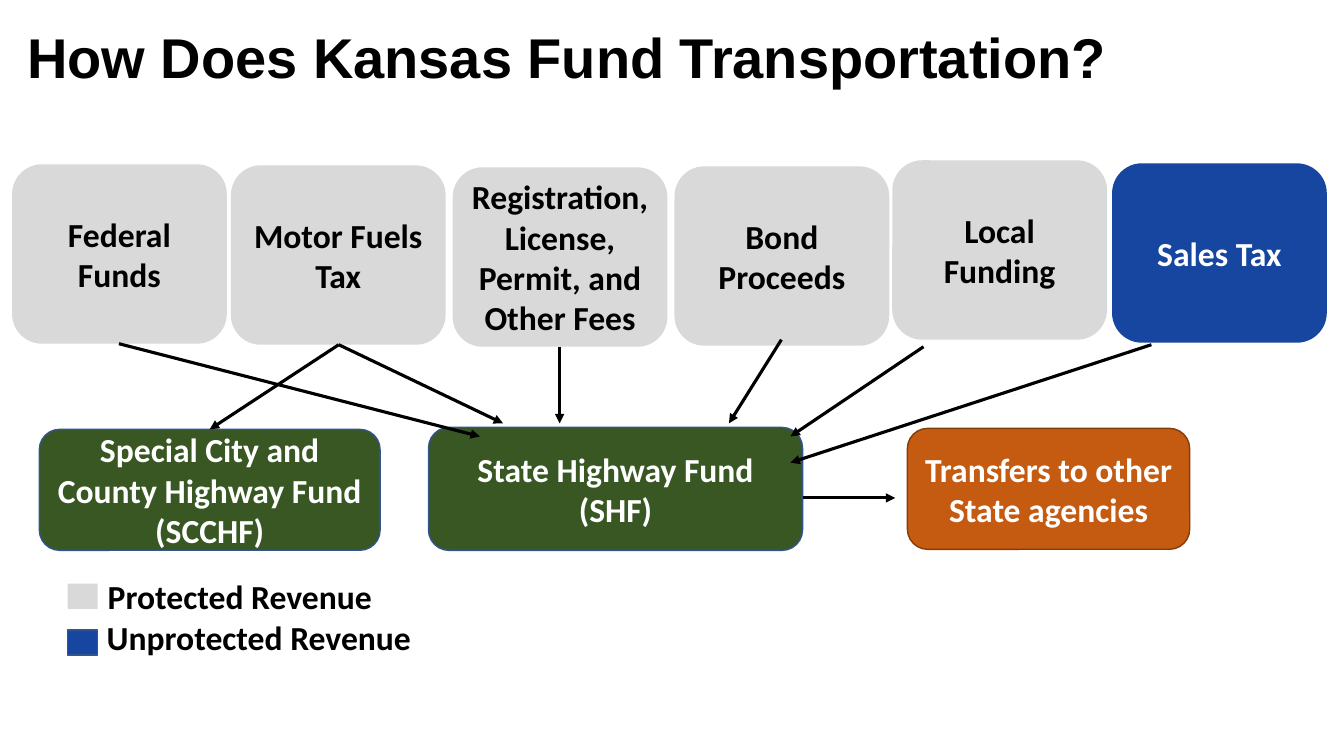
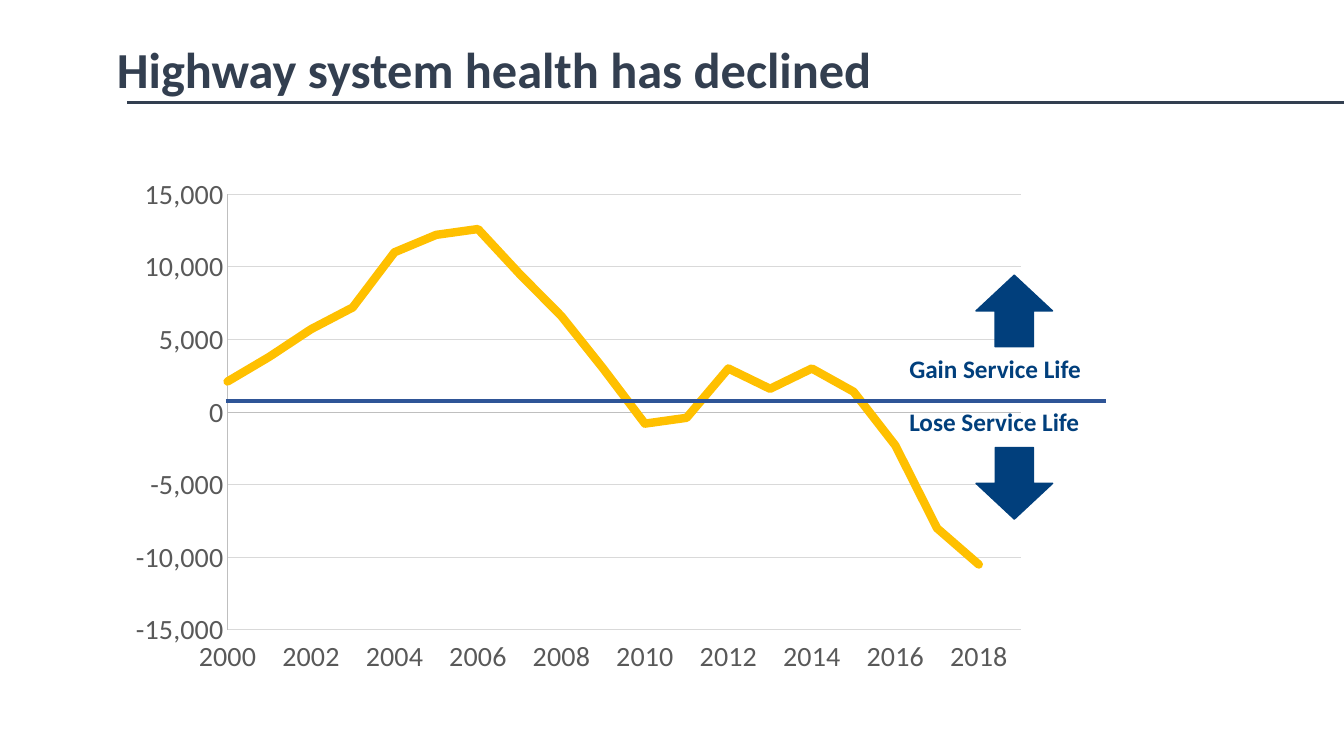
from dataclasses import dataclass

from lxml import etree
from pptx import Presentation
from pptx import util as u
from pptx.chart import data as chart_data
from pptx.dml.color import RGBColor
from pptx.enum import chart as chart_enum, shapes, text
from pptx.oxml import parse_xml
from pptx.oxml.ns import nsdecls, qn


@dataclass(frozen=True)
class Theme:
    black: str = "000000"
    white: str = "FFFFFF"
    slate: str = "333F50"
    protected: str = "D9D9D9"
    unprotected: str = "16469F"
    fund: str = "385723"
    transfer: str = "C55A11"
    transfer_edge: str = "843C0B"
    edge: str = "325491"
    navy: str = "013F7C"
    zero_line: str = "2F5597"
    health: str = "FFC000"
    axis_text: str = "595959"
    axis_line: str = "BFBFBF"
    grid: str = "D9D9D9"
    body_font: str = "Calibri"
    title_font: str = "Arial"
    flow_title: int = 40
    health_title: int = 36
    label: int = 24
    axis: int = 20
    note: int = 18


theme = Theme()
rgb = RGBColor.from_string


def write(frame, paragraphs, size, color, font=theme.body_font,
          align=text.PP_ALIGN.LEFT, anchor=text.MSO_ANCHOR.TOP, spacing=None):
    """Fill a text frame with bold paragraphs in one style."""
    frame.word_wrap = True
    frame.auto_size = text.MSO_AUTO_SIZE.NONE
    frame.vertical_anchor = anchor
    for index, words in enumerate(paragraphs):
        paragraph = frame.add_paragraph() if index else frame.paragraphs[0]
        paragraph.alignment = align
        paragraph.line_spacing = spacing
        run = paragraph.add_run()
        run.text = words
        for key, value in dict(name=font, size=u.Pt(size), bold=True).items():
            setattr(run.font, key, value)
        run.font.color.rgb = rgb(color)


def draw_line(slide, start, end, color, width, arrow=False):
    """Draw a straight line, with an arrowhead at its end if asked."""
    line = slide.shapes.add_connector(
        shapes.MSO_CONNECTOR.STRAIGHT, *map(u.Inches, start + end))
    line.line.color.rgb = rgb(color)
    line.line.width = u.Pt(width)
    if arrow:
        etree.SubElement(line.line._get_or_add_ln(), qn("a:tailEnd"), type="triangle")
    etree.SubElement(line._element.spPr, qn("a:effectLst"))


prs = Presentation()
prs.slide_width, prs.slide_height = u.Inches(13.33), u.Inches(7.5)

# Slides and their titles
titles = [
    ("How Does Kansas Fund Transportation?", (0.17, 0.25, 11.5, 1.45),
     theme.flow_title, theme.black, theme.title_font),
    ("Highway system health has declined", (1.06, 0.4, 11.92, 0.69),
     theme.health_title, theme.slate, theme.body_font),
]
for words, place, size, color, font in titles:
    title = prs.slides.add_slide(prs.slide_layouts[5]).shapes.title
    title.left, title.top, title.width, title.height = map(u.Inches, place)
    write(title.text_frame, [words], size, color, font, spacing=0.9)
funding, health = prs.slides

# Funding: revenue sources above, funds and transfers below
source_size = (2.13, 1.78)
gray = (theme.protected, None, theme.black)
blue = (theme.unprotected, None, theme.white)
green = (theme.fund, theme.edge, theme.white)
orange = (theme.transfer, theme.transfer_edge, theme.white)
boxes = [
    (["State Highway Fund (SHF)"], (4.25, 4.24, 3.71, 1.22), green),
    (["Special City and County Highway Fund", "(SCCHF)"], (0.39, 4.26, 3.38, 1.2), green),
    (["Transfers to other State agencies"], (9, 4.25, 2.8, 1.2), orange),
    (["Federal Funds"], (0.12, 1.63) + source_size, gray),
    (["Motor Fuels Tax"], (2.29, 1.64) + source_size, gray),
    (["Registration, License, Permit, and Other Fees"], (4.49, 1.66) + source_size, gray),
    (["Bond Proceeds"], (6.69, 1.65) + source_size, gray),
    (["Local Funding"], (8.85, 1.59) + source_size, gray),
    (["Sales Tax"], (11.03, 1.62) + source_size, blue),
    # Legend swatches
    ([], (0.67, 5.79, 0.3, 0.25), gray),
    ([], (0.67, 6.25, 0.3, 0.25), (theme.unprotected, theme.edge, theme.white)),
]
for words, place, (fill, edge, color) in boxes:
    outline = shapes.MSO_SHAPE.ROUNDED_RECTANGLE if words else shapes.MSO_SHAPE.RECTANGLE
    box = funding.shapes.add_shape(outline, *map(u.Inches, place))
    box.shadow.inherit = False
    box.fill.solid()
    box.fill.fore_color.rgb = rgb(fill)
    if edge:
        box.line.color.rgb = rgb(edge)
        box.line.width = u.Pt(1)
    else:
        box.line.fill.background()
    write(box.text_frame, words, theme.label, color,
          align=text.PP_ALIGN.CENTER, anchor=text.MSO_ANCHOR.MIDDLE)

# Flows between sources, funds and agencies
flows = [
    ((1.18, 3.41), (4.76, 4.33)),
    ((3.36, 3.42), (4.99, 4.2)),
    ((3.36, 3.42), (2.08, 4.26)),
    ((5.55, 3.44), (5.55, 4.2)),
    ((7.75, 3.37), (7.23, 4.2)),
    ((9.16, 3.44), (7.84, 4.33)),
    ((11.42, 3.42), (7.84, 4.59)),
    ((7.96, 4.94), (8.88, 4.94)),
]
for start, end in flows:
    draw_line(funding, start, end, theme.black, 2.25, arrow=True)

# Health: title rule and chart
draw_line(health, (1.26, 1.02), (13.33, 1.02), theme.slate, 2.25)

scores = [2100, 3800, 5700, 7200, 11000, 12200, 12600, 9500, 6600, 3000,
          -800, -400, 3000, 1600, 3000, 1400, -2300, -8000, -10500]
history = chart_data.XyChartData()
series = history.add_series("Series 1")
for year, score in enumerate(scores, 2000):
    series.add_data_point(year, score)
chart = health.shapes.add_chart(
    chart_enum.XL_CHART_TYPE.XY_SCATTER_LINES_NO_MARKERS,
    *map(u.Inches, (1.06, 1.64, 9.5, 5.05)), history).chart
chart.has_legend = chart.has_title = False
chart.font.name = theme.body_font
chart.font.size = u.Pt(theme.axis)
chart.font.color.rgb = rgb(theme.axis_text)

plot = chart.plots[0]
plot.vary_by_categories = False
trend = plot.series[0]
trend.smooth = False
trend.marker.style = chart_enum.XL_MARKER_STYLE.NONE
trend.format.line.color.rgb = rgb(theme.health)
trend.format.line.width = u.Pt(6)
trend.format.line._get_or_add_ln().set("cap", "rnd")

low, beside = chart_enum.XL_TICK_LABEL_POSITION.LOW, chart_enum.XL_TICK_LABEL_POSITION.NEXT_TO_AXIS
axes = [
    (chart.category_axis, "General", low, dict(
        minimum_scale=2000, maximum_scale=2019, major_unit=2, has_major_gridlines=False)),
    (chart.value_axis, "#,##0", beside, dict(
        minimum_scale=-15000, maximum_scale=15000, major_unit=5000, has_major_gridlines=True)),
]
for axis, number_format, position, settings in axes:
    settings.update(major_tick_mark=chart_enum.XL_TICK_MARK.NONE,
                    minor_tick_mark=chart_enum.XL_TICK_MARK.NONE)
    for key, value in settings.items():
        setattr(axis, key, value)
    axis.tick_label_position = position
    axis.tick_labels.number_format = number_format
    axis.tick_labels.number_format_is_linked = False
    axis.format.line.color.rgb = rgb(theme.axis_line)
    axis.format.line.width = u.Pt(0.75)
grid = chart.value_axis.major_gridlines.format.line
grid.color.rgb = rgb(theme.grid)
grid.width = u.Pt(0.75)

# Fixed inner plot area
plot_area = chart._chartSpace.chart.plotArea
for old_layout in plot_area.findall(qn("c:layout")):
    plot_area.remove(old_layout)
settings = dict(layoutTarget="inner", xMode="edge", yMode="edge", x=0.126, y=0.057, w=0.828, h=0.859)
values = "".join(f'<c:{key} val="{value}"/>' for key, value in settings.items())
plot_area.insert(0, parse_xml(
    f'<c:layout {nsdecls("c")}><c:manualLayout>{values}</c:manualLayout></c:layout>'))

draw_line(health, (2.24, 3.98), (10.97, 3.98), theme.zero_line, 3)

# Labels: revenue legend, and service life on each side of the line
labels = [
    (funding, "Protected Revenue", (0.97, 5.66, 3.03, 0.5), theme.label, theme.black),
    (funding, "Unprotected Revenue", (0.96, 6.07, 3.99, 0.5), theme.label, theme.black),
    (health, "Gain Service Life", (8.92, 3.46, 2.93, 0.71), theme.note, theme.navy),
    (health, "Lose Service Life", (8.92, 3.98, 2.27, 0.71), theme.note, theme.navy),
]
for slide, words, place, size, color in labels:
    label = slide.shapes.add_textbox(*map(u.Inches, place))
    write(label.text_frame, [words], size, color)

# Gain and lose arrows
for top, rotation in ((2.73, 0), (4.44, 180)):
    direction = health.shapes.add_shape(
        shapes.MSO_SHAPE.UP_ARROW, *map(u.Inches, (9.68, top, 0.76, 0.71)))
    direction.rotation = rotation
    direction.shadow.inherit = False
    direction.fill.solid()
    direction.fill.fore_color.rgb = rgb(theme.navy)
    direction.line.color.rgb = rgb(theme.navy)
    direction.line.width = u.Pt(1)

prs.save("out.pptx")
